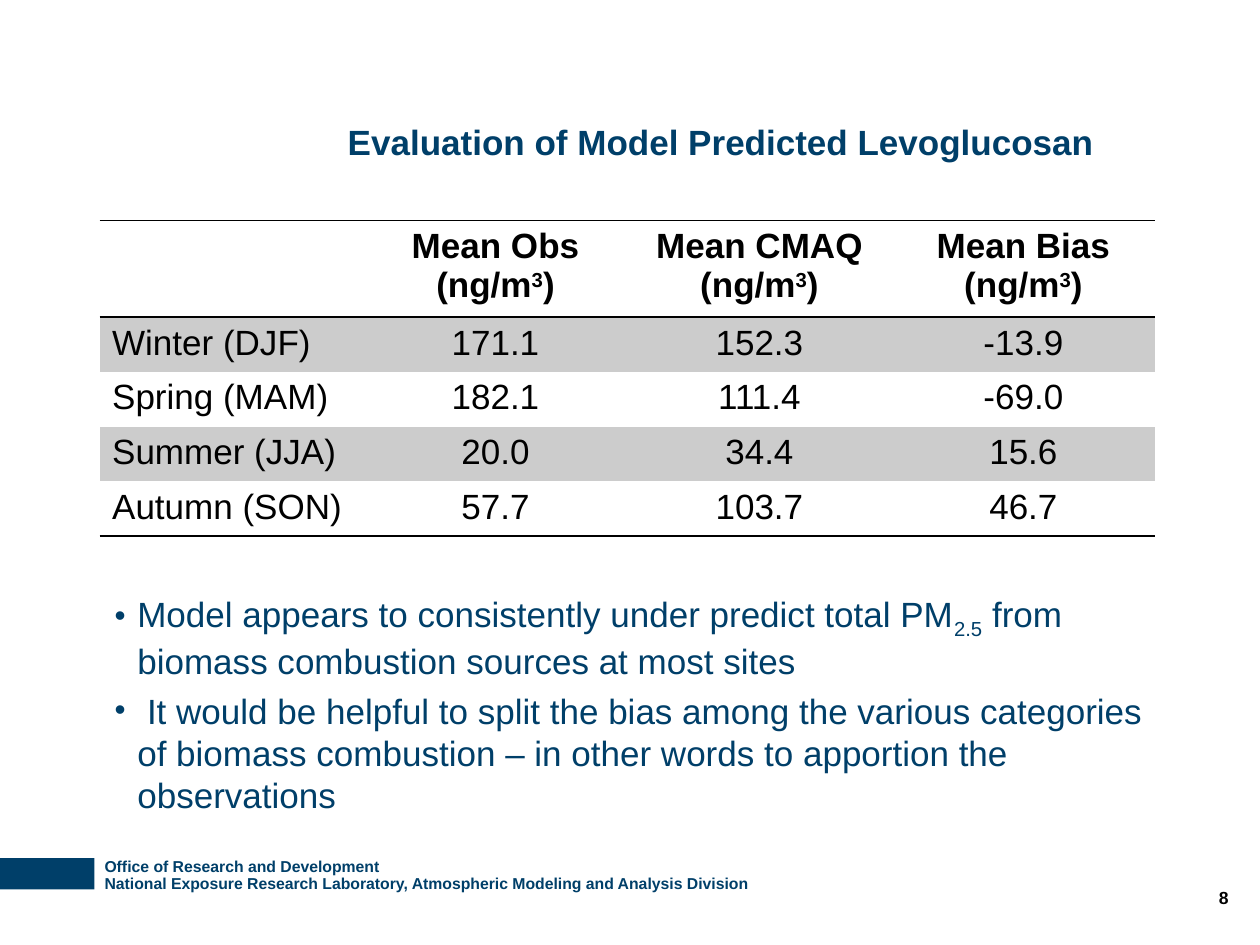
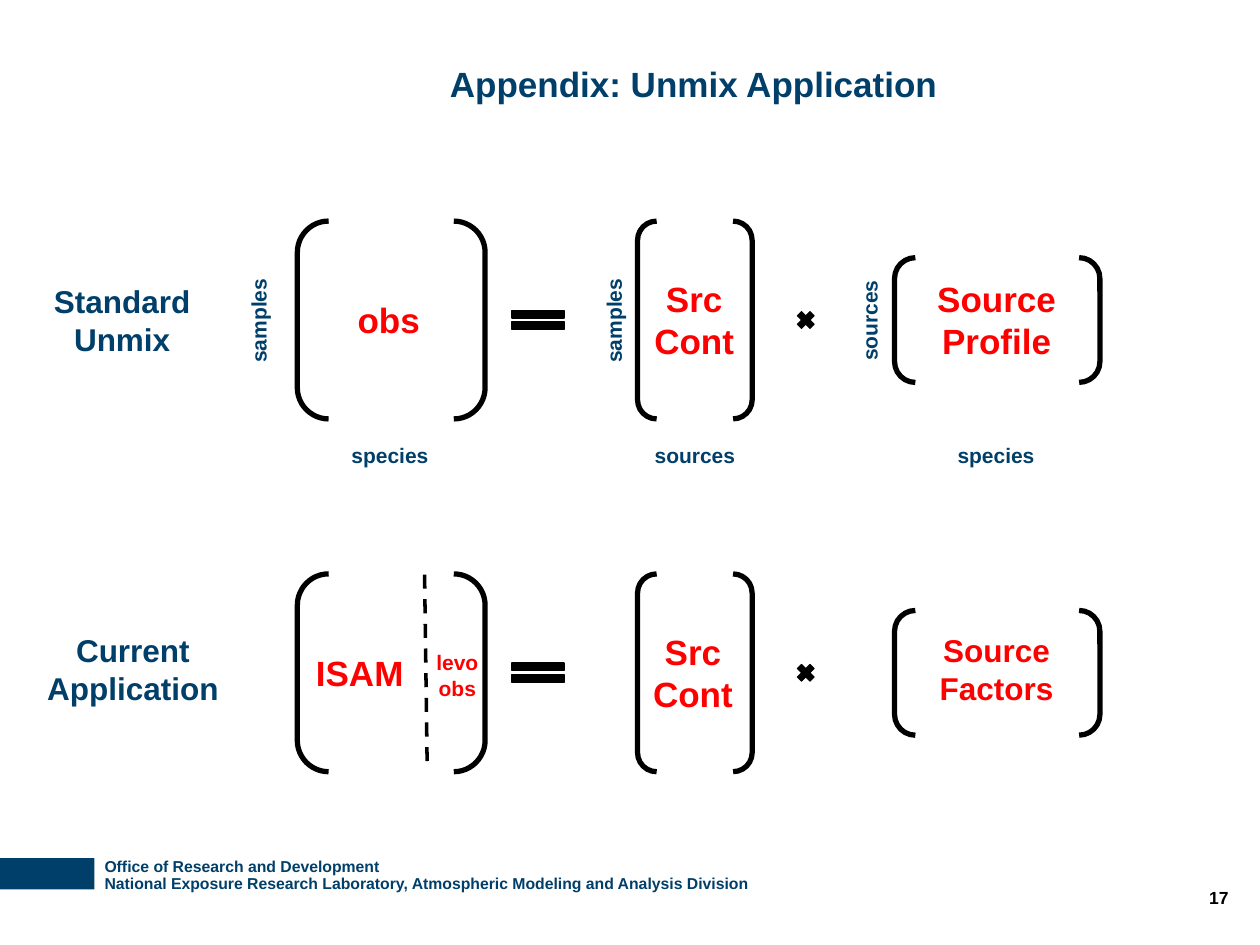
from dataclasses import dataclass
from lxml.etree import SubElement as Sub
from pptx import Presentation
from pptx.dml.color import RGBColor as RGB
from pptx.enum.dml import MSO_LINE as Dash
from pptx.enum.shapes import MSO_CONNECTOR as Link, MSO_SHAPE as Kind
from pptx.enum.text import MSO_ANCHOR as Anchor, MSO_AUTO_SIZE as Fit, PP_ALIGN as Align
from pptx.oxml.ns import qn
from pptx.util import Inches, Pt


@dataclass(frozen=True)
class Theme:
    font: str = "Arial"
    navy: str = "003F69"
    red: str = "FF0000"
    black: str = "000000"
    grey: str = "CCCCCC"
    head: int = 20
    side: int = 18
    small: int = 12
    page: int = 10
    foot: int = 9


look = Theme()
deck = Presentation()
deck.slide_width, deck.slide_height = Inches(10), Inches(7.5)
COL, ROW = deck.slide_width / 100, deck.slide_height / 75


def span(x, y, w, h):
    return int(x * COL), int(y * ROW), int(w * COL), int(h * ROW)


def write(frame, lines, size, color=look.navy, bold=True, align=Align.CENTER, base=0):
    form = {"name": look.font, "size": Pt(size), "bold": bold}
    for num, line in enumerate(lines):
        para = frame.add_paragraph() if num else frame.paragraphs[0]
        para.alignment = align
        for part, text in enumerate(line.split("|")):
            run = para.add_run()
            run.text = text
            for key, val in form.items():
                setattr(run.font, key, val)
            run.font.color.rgb = RGB.from_string(color)
            if part % 2:
                run._r.get_or_add_rPr().set("baseline", str(base))


flush = {"margin_left": 0, "margin_right": 0, "margin_top": 0, "margin_bottom": 0, "word_wrap": True}
foot = [
    "Office of Research and Development",
    "National Exposure Research Laboratory, Atmospheric Modeling and Analysis Division",
]
pages = [
    (1, "Evaluation of Model Predicted Levoglucosan", (26.6, 7.3, 65, 7.9), "8"),
    (5, "Appendix: Unmix Application", (34.7, 3, 57.4, 7.2), "17"),
]
for plan, name, area, page in pages:
    slide = deck.slides.add_slide(deck.slide_layouts[plan])
    title = slide.shapes.title
    title.left, title.top, title.width, title.height = span(*area)
    title.text_frame.auto_size = Fit.NONE
    title.text_frame.vertical_anchor = Anchor.MIDDLE
    write(title.text_frame, [name], look.head, align=Align.LEFT)

    band = slide.shapes.add_shape(Kind.RECTANGLE, *span(0, 68.1, 7.5, 2.5))
    band.shadow.inherit = False
    band.fill.solid()
    band.fill.fore_color.rgb = RGB.from_string(look.navy)
    band.line.fill.background()

    for area, lines, size, color, align, anchor in [
        ((8.3, 68.2, 61.7, 2.7), foot, look.foot, look.navy, Align.JUSTIFY, Anchor.BOTTOM),
        ((76.7, 70, 20.8, 2.5), [page], look.page, look.black, Align.RIGHT, Anchor.MIDDLE),
    ]:
        frame = slide.shapes.add_textbox(*span(*area)).text_frame
        for key, val in flush.items():
            setattr(frame, key, val)
        frame.vertical_anchor = anchor
        write(frame, lines, size, color, align=align)
        if lines is foot:
            for para in frame.paragraphs:
                para.line_spacing = 0.9

first, second = deck.slides

unit = "(ng/m|3|)"
data = [
    ["", f"Mean Obs\n{unit}", f"Mean CMAQ\n{unit}", f"Mean Bias\n{unit}"],
    ["Winter (DJF)", "171.1", "152.3", "-13.9"],
    ["Spring (MAM)", "182.1", "111.4", "-69.0"],
    ["Summer (JJA)", "20.0", "34.4", "15.6"],
    ["Autumn (SON)", "57.7", "103.7", "46.7"],
]
table = first.shapes.add_table(5, 4, *span(7.9, 17.5, 83.8, 23.6)).table
table.first_row = table.horz_banding = False
for r, line in enumerate(data):
    table.rows[r].height = int((4.1 if r else 7.2) * ROW)
    for c, text in enumerate(line):
        cell = table.cell(r, c)
        write(cell.text_frame, text.split("\n"), look.head, look.black, bold=not r,
              align=Align.CENTER if c else Align.LEFT, base=30000)
        edges = {"L": False, "R": False, "T": r in (0, 1), "B": r in (0, 4)}
        for side, shown in edges.items():
            edge = Sub(cell._tc.get_or_add_tcPr(), qn(f"a:ln{side}"), w=str(Pt(1)))
            fill = Sub(edge, qn("a:solidFill" if shown else "a:noFill"))
            if shown:
                Sub(fill, qn("a:srgbClr"), val=look.black)
        if r % 2:
            cell.fill.solid()
            cell.fill.fore_color.rgb = RGB.from_string(look.grey)
        else:
            cell.fill.background()

body = first.placeholders[1]
body.left, body.top, body.width, body.height = span(8.1, 46.5, 83.8, 19.9)
body.text_frame.auto_size = Fit.NONE
write(body.text_frame, [
    "Model appears to consistently under predict total PM|2.5| from biomass combustion sources at most sites",
    " It would be helpful to split the bias among the various categories of biomass combustion"
    " – in other words to apportion the observations",
], look.head, bold=False, align=Align.LEFT, base=-25000)
for num, para in enumerate(body.text_frame.paragraphs):
    props = para._p.get_or_add_pPr()
    props.set("marL", str(Inches(0.18)))
    props.set("indent", str(-Inches(0.18)))
    Sub(Sub(props, qn("a:buClr")), qn("a:srgbClr"), val=look.navy)
    Sub(props, qn("a:buSzPct"), val="90000")
    Sub(props, qn("a:buFont"), typeface=look.font)
    Sub(props, qn("a:buChar"), char="•")
    para.space_before = Pt(4 * num)

signs = [
    (Kind.DOUBLE_BRACKET, 23.6, 14.9, 15.7),
    (Kind.MATH_EQUAL, 39.9, 5.6, 2.6),
    (Kind.DOUBLE_BRACKET, 50.6, 9.1, 15.7),
    (Kind.MATH_MULTIPLY, 63, 1.9, 1.9),
    (Kind.DOUBLE_BRACKET, 71, 16.3, 9.9),
]
top, low = 25.4, 53.4
for mid in (top, low):
    for kind, x, w, h in signs:
        sign = second.shapes.add_shape(kind, *span(x, mid - h / 2, w, h))
        sign.shadow.inherit = False
        sign.line.color.rgb = RGB.from_string(look.black)
        if kind == Kind.DOUBLE_BRACKET:
            sign.fill.background()
            sign.line.width = Pt(3)
        else:
            sign.fill.solid()
            sign.fill.fore_color.rgb = RGB.from_string(look.black)
            sign.line.width = Pt(0.75)

split = second.shapes.add_connector(Link.STRAIGHT, *span(33.7, 45.6, 33.9, 60.4))
split.line.color.rgb = RGB.from_string(look.black)
split.line.width = Pt(2)
split.line.dash_style = Dash.DASH
Sub(split.element.spPr, qn("a:effectLst"))

labels = [
    ("Standard\nUnmix", 2.7, 14, top, look.side, look.navy),
    ("obs", 23.4, 14.9, top, look.head, look.red),
    ("Src\nCont", 50.6, 9, top, look.head, look.red),
    ("Source\nProfile", 71.1, 16, top, look.head, look.red),
    ("species", 26.4, 9.1, 36.1, look.small, look.navy),
    ("sources", 50.6, 9.1, 36.1, look.small, look.navy),
    ("species", 74.5, 9.1, 36.1, look.small, look.navy),
    ("Current\nApplication", 2.7, 15.7, 53.1, look.side, look.navy),
    ("ISAM", 23.4, 10.3, low, look.head, look.red),
    ("levo\nobs", 33.3, 6, 53.6, look.small, look.red),
    ("Src\nCont", 50.5, 9, low, look.head, look.red),
    ("Source\nFactors", 71.1, 16, 53.1, look.side, look.red),
]
for text, x, w, mid, size, color in labels:
    lines = text.split("\n")
    h = 1 + len(lines) * size / 6
    frame = second.shapes.add_textbox(*span(x, mid - h / 2, w, h)).text_frame
    frame.word_wrap = True
    write(frame, lines, size, color)

for text, x in [("samples", 19), ("samples", 47.2), ("sources", 67.5)]:
    box = second.shapes.add_textbox(*span(x, 18.8, 4, 13.3))
    box.text_frame.word_wrap = True
    box.element.txBody.bodyPr.set("vert", "vert270")
    write(box.text_frame, [text], look.small)

deck.save("out.pptx")
